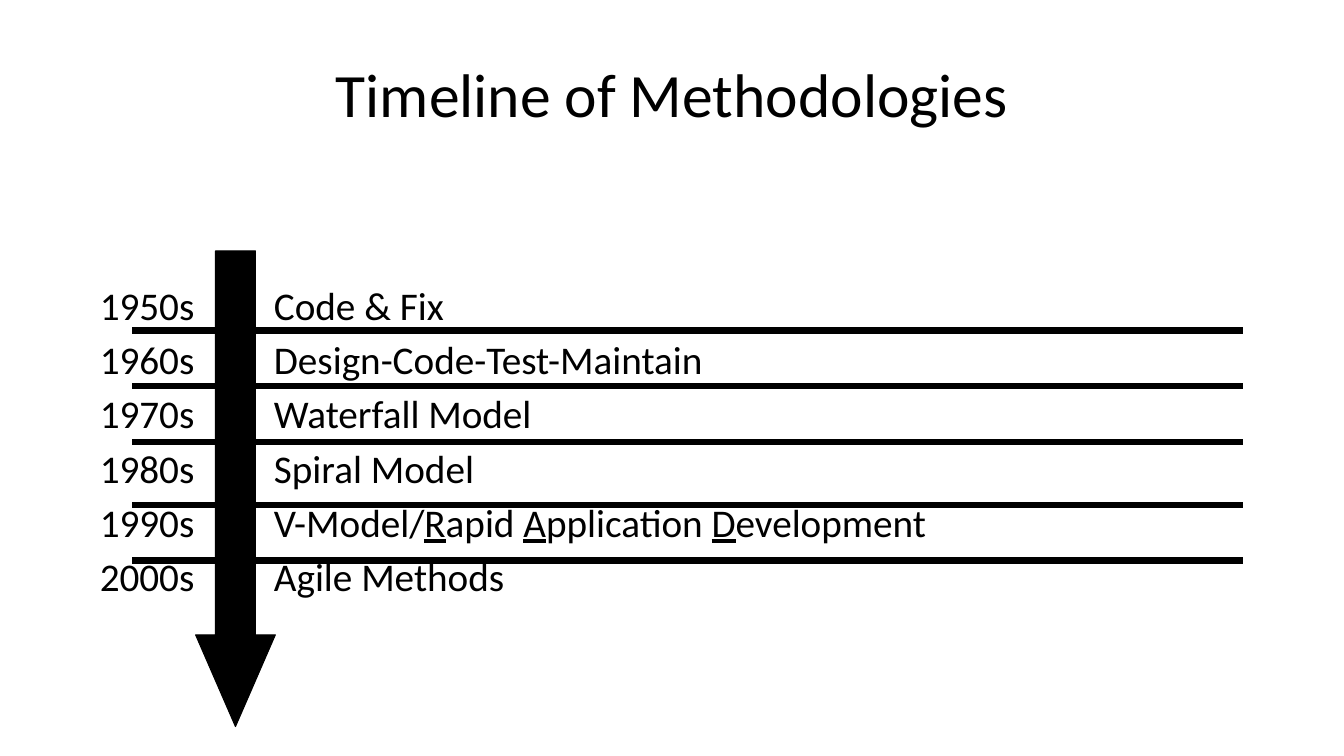
import pptx
import pptx.dml.color
import pptx.enum.shapes
import pptx.enum.text
import pptx.oxml
import pptx.oxml.ns
import pptx.util
from pptx.util import Cm

BLACK = pptx.dml.color.RGBColor(0x00, 0x00, 0x00)
TEXT_INDENT = Cm(4.39)

# Each method is a list of (text, underlined) pieces
TIMELINE = [
    ("1950s", [("Code & Fix", False)]),
    ("1960s", [("Design-Code-Test-Maintain", False)]),
    ("1970s", [("Waterfall Model", False)]),
    ("1980s", [("Spiral Model", False)]),
    ("1990s", [("V-Model/", False), ("R", True), ("apid ", False), ("A", True),
               ("pplication ", False), ("D", True), ("evelopment", False)]),
    ("2000s", [("Agile Methods", False)]),
]
DIVIDER_TOPS = [8.33, 9.73, 11.13, 12.73, 14.12]


def add_text(paragraph, text, size=28, underline=False):
    run = paragraph.add_run()
    run.text = text
    run.font.name = "Calibri"
    run.font.size = pptx.util.Pt(size)
    run.font.color.rgb = BLACK
    if underline:
        run.font.underline = True


presentation = pptx.Presentation()
presentation.slide_width = Cm(33.87)
presentation.slide_height = Cm(19.05)
slide = presentation.slides.add_slide(presentation.slide_layouts[1])

# Title
title = slide.shapes.title
title.left, title.top, title.width, title.height = Cm(1.7), Cm(0.76), Cm(30.48), Cm(3.18)
title.text_frame.vertical_anchor = pptx.enum.text.MSO_ANCHOR.MIDDLE
title_paragraph = title.text_frame.paragraphs[0]
title_paragraph.alignment = pptx.enum.text.PP_ALIGN.CENTER
add_text(title_paragraph, "Timeline of Methodologies", size=44)

# Decades and methods, aligned by a hanging indent
body = slide.placeholders[1]
body.left, body.top, body.width, body.height = Cm(2.26), Cm(6.96), Cm(29.59), Cm(10)
body.text_frame.auto_size = pptx.enum.text.MSO_AUTO_SIZE.NONE
for index, (decade, method) in enumerate(TIMELINE):
    paragraph = body.text_frame.paragraphs[0] if index == 0 else body.text_frame.add_paragraph()
    paragraph.space_before = pptx.util.Pt(5.1)
    properties = paragraph._p.get_or_add_pPr()
    properties.set("marL", str(TEXT_INDENT))
    properties.set("indent", str(-TEXT_INDENT))
    properties.append(pptx.oxml.parse_xml(
        f'<a:buNone {pptx.oxml.ns.nsdecls("a")}/>'))
    add_text(paragraph, decade + "\t")
    for text, underline in method:
        add_text(paragraph, text, underline=underline)

# Time arrow
arrow = slide.shapes.add_shape(
    pptx.enum.shapes.MSO_SHAPE.DOWN_ARROW, Cm(4.93), Cm(6.32), Cm(2.01), Cm(11.99))
arrow.adjustments[0] = 0.5
arrow.adjustments[1] = 1.15
arrow.shadow.inherit = False
arrow.fill.solid()
arrow.fill.fore_color.rgb = BLACK
arrow.line.color.rgb = BLACK
arrow.line.width = pptx.util.Pt(0.75)

# Dividers between decades
for top in DIVIDER_TOPS:
    divider = slide.shapes.add_connector(
        pptx.enum.shapes.MSO_CONNECTOR.STRAIGHT, Cm(3.33), Cm(top), Cm(31.32), Cm(top))
    divider.line.color.rgb = BLACK
    divider.line.width = pptx.util.Pt(4.5)
    divider._element.spPr.append(pptx.oxml.parse_xml(
        f'<a:effectLst {pptx.oxml.ns.nsdecls("a")}/>'))

presentation.save("out.pptx")
